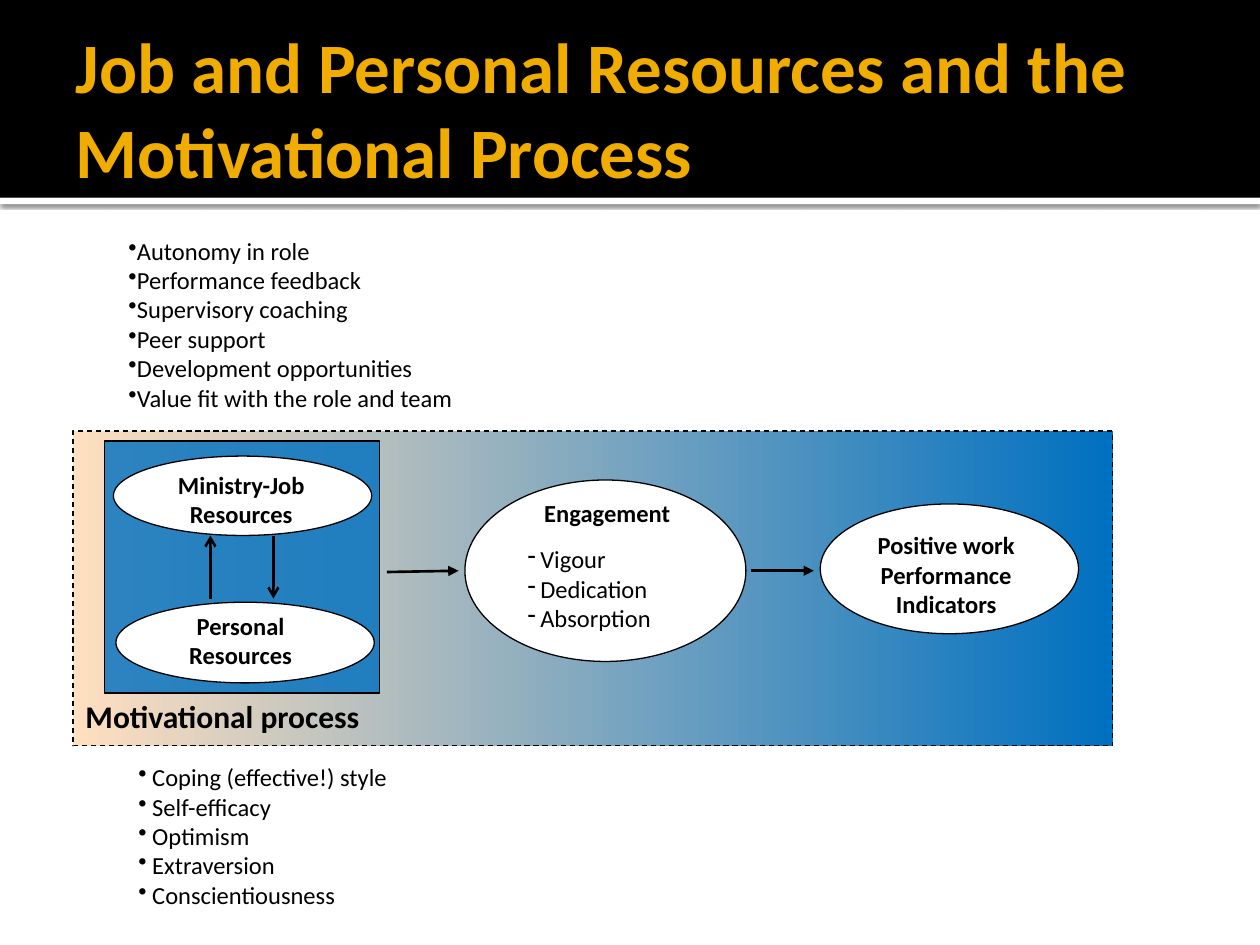
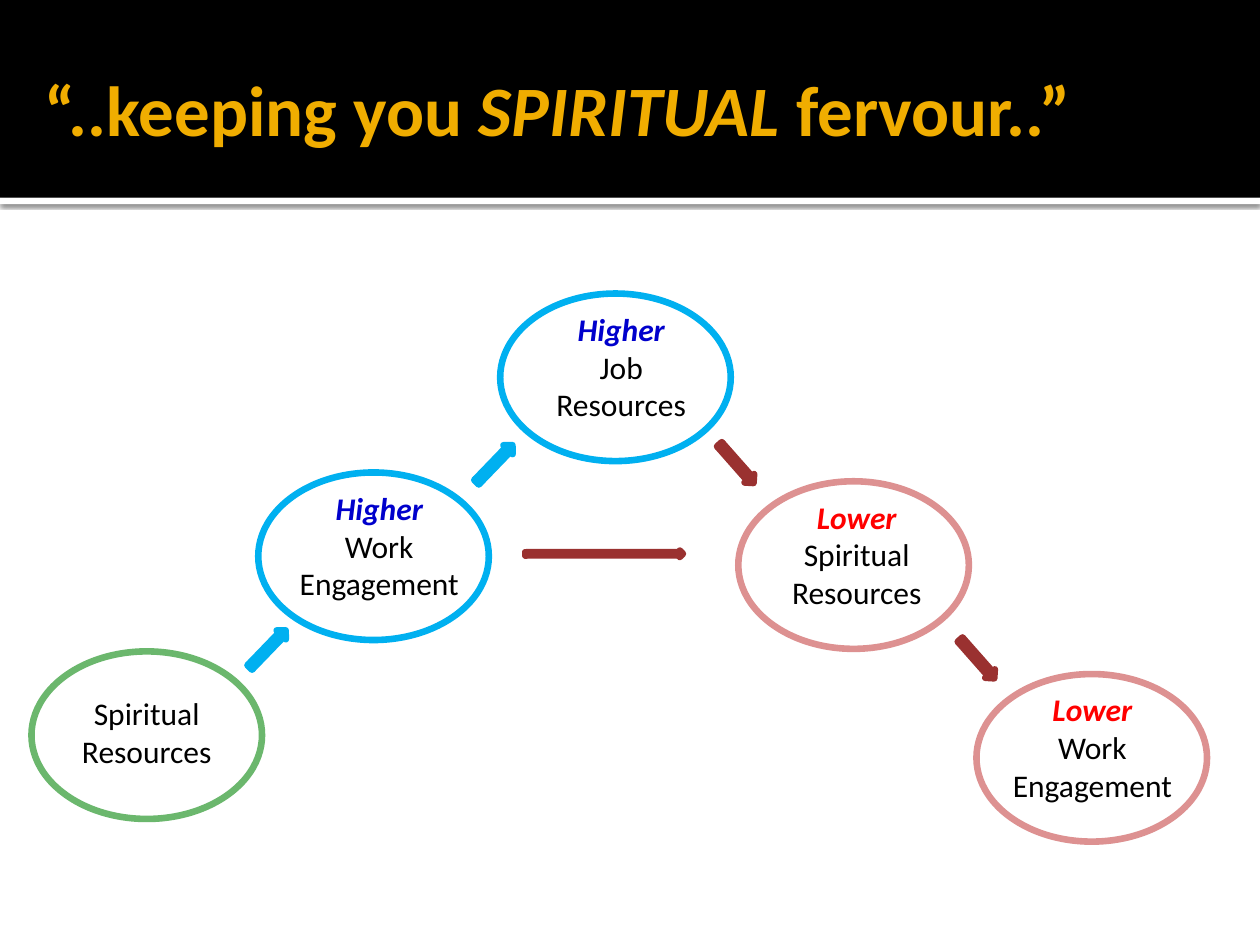
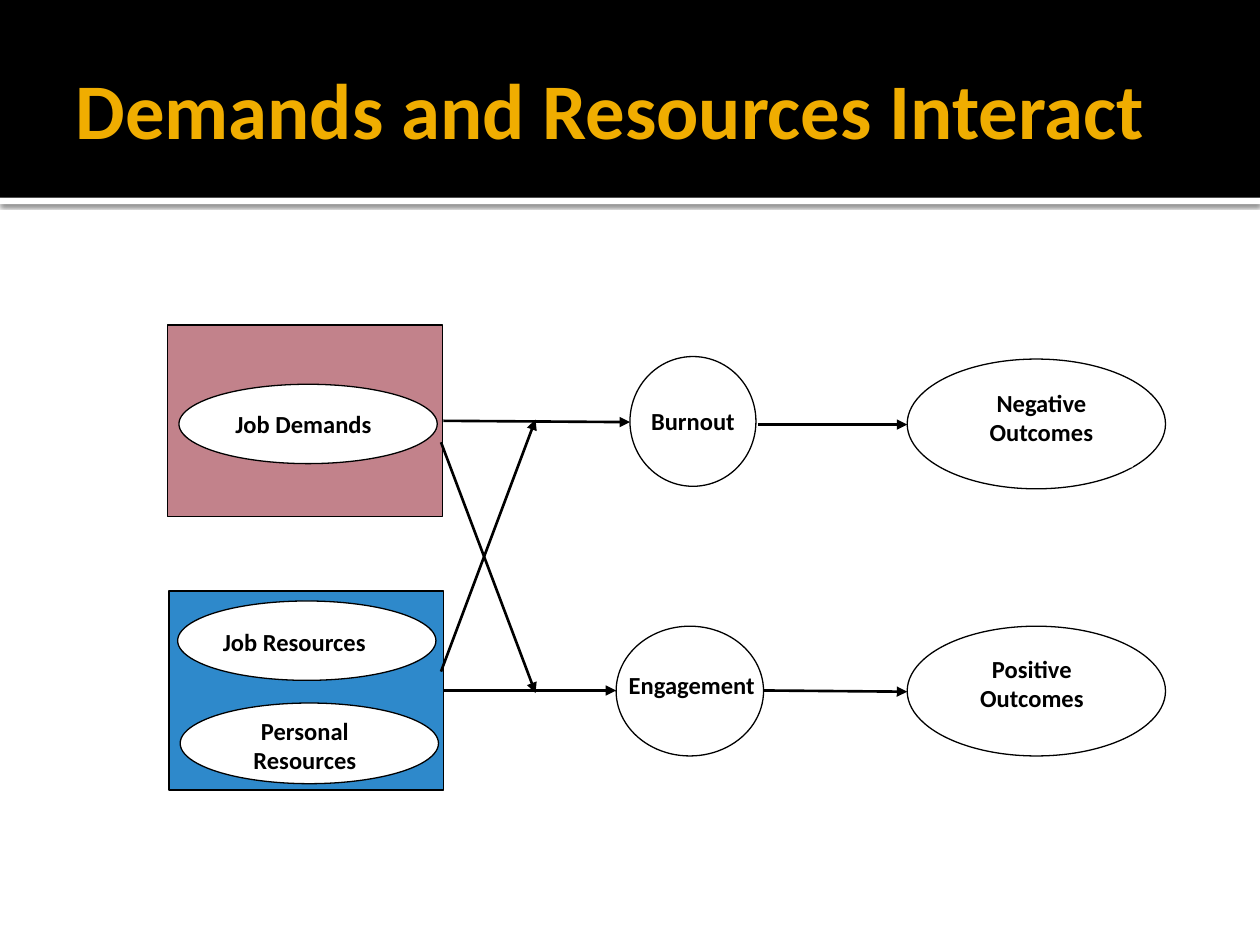
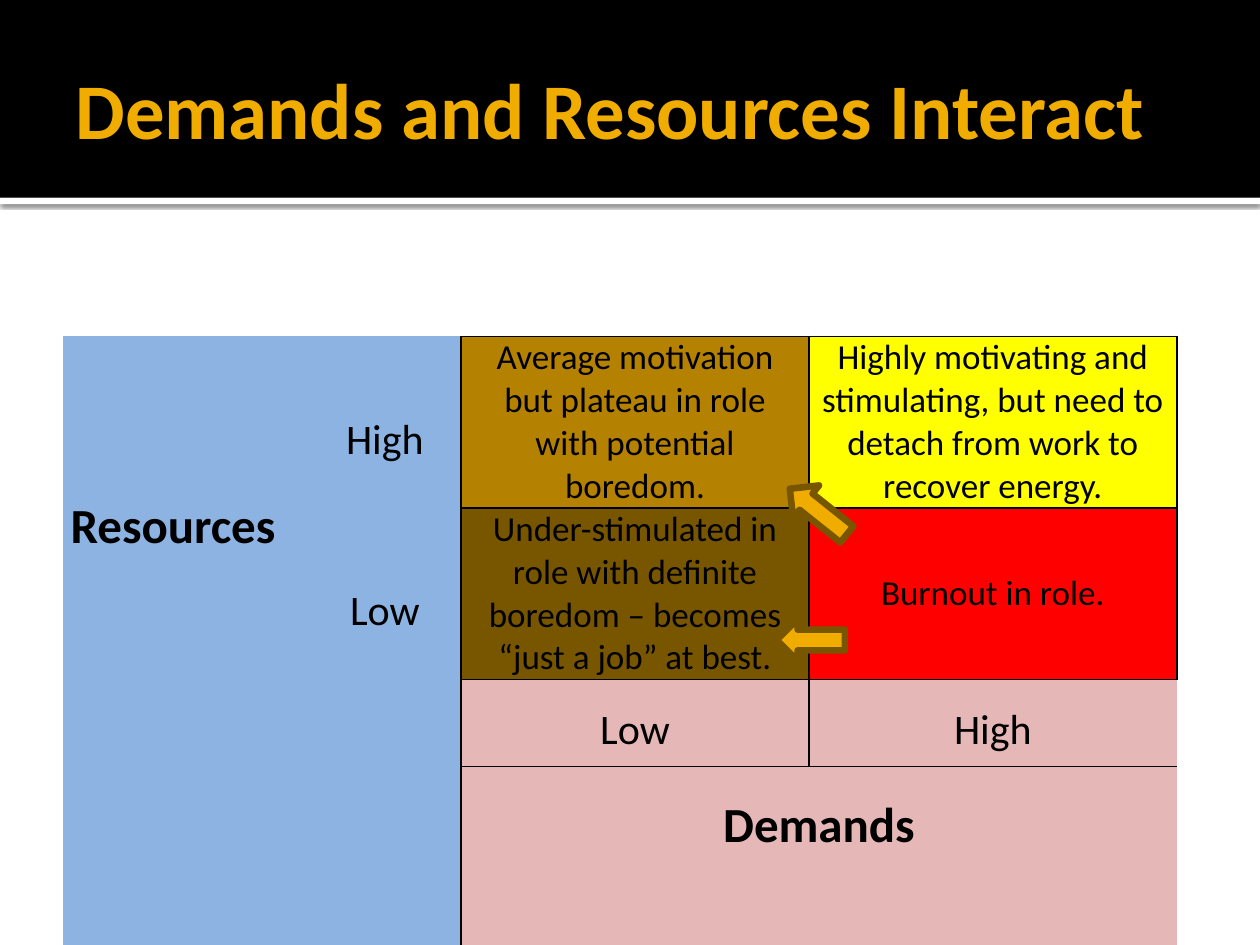
from dataclasses import dataclass
from typing import Optional

import lxml.etree
import pptx
import pptx.dml.color
import pptx.enum.dml
import pptx.enum.shapes
import pptx.enum.text
import pptx.oxml.ns
import pptx.util

Inches = pptx.util.Inches
Pt = pptx.util.Pt
RGBColor = pptx.dml.color.RGBColor
SHAPE = pptx.enum.shapes.MSO_SHAPE
ALIGN = pptx.enum.text.PP_ALIGN
ANCHOR = pptx.enum.text.MSO_ANCHOR
qn = pptx.oxml.ns.qn

# Shared look
FONT = "Calibri"
BLACK = RGBColor(0x00, 0x00, 0x00)
WHITE = RGBColor(0xFF, 0xFF, 0xFF)
GOLD = RGBColor(0xF0, 0xAD, 0x00)
BROWN = RGBColor(0x78, 0x56, 0x00)
OCHRE = RGBColor(0xB4, 0x82, 0x00)
PEACH = RGBColor(0xFF, 0xDF, 0xBF)
BLUE = RGBColor(0x00, 0x70, 0xC0)
SKY = RGBColor(0x00, 0xB0, 0xF0)
PALE_BLUE = RGBColor(0x8D, 0xB3, 0xE2)
NAVY = RGBColor(0x00, 0x00, 0xCC)
GREEN = RGBColor(0x6B, 0xB7, 0x6D)
ROSE = RGBColor(0xDD, 0x91, 0x91)
PINK = RGBColor(0xE5, 0xB8, 0xB7)
MAROON = RGBColor(0x9A, 0x31, 0x30)
WINE = RGBColor(0x90, 0x19, 0x29)
RED = RGBColor(0xFF, 0x00, 0x00)
YELLOW = RGBColor(0xFF, 0xFF, 0x00)
HEAVY = 3.78
NO_GRID_STYLE = "{2D5ABB26-0587-4C30-8999-92F81FD0307C}"

Box = tuple[float, float, float, float]
Point = tuple[float, float]


@dataclass
class Label:
    text: str
    at: Box
    fill: Optional[RGBColor] = None
    align: ALIGN = ALIGN.CENTER


@dataclass
class Arrow:
    start: Point
    end: Point
    head: str = "triangle"


@dataclass
class Node:
    left: float
    top: float
    color: RGBColor
    label_dx: float
    label_width: float
    text: str
    level: str = ""
    level_color: RGBColor = NAVY


@dataclass
class BlockArrow:
    kind: SHAPE
    at: Box
    rotation: float
    fill: RGBColor
    line: RGBColor


@dataclass
class Cell:
    row: int
    col: int
    text: str
    fill: RGBColor
    size: float
    borders: str = ""
    bold: bool = False
    align: ALIGN = ALIGN.CENTER
    anchor: ANCHOR = ANCHOR.TOP
    margin_top: float = 0
    spacing: float = 1
    span: tuple[int, int] = (1, 1)


def sub(parent, tag: str, **attrs):
    return lxml.etree.SubElement(parent, qn(tag), attrs)


def write(tf, text: str, *, size: float = 14, bold: bool = False, italic: bool = False,
          color: RGBColor = BLACK, align: ALIGN = ALIGN.LEFT, bullet: str = "",
          hang: float = 0, after: float = 0, spacing: float = 1, run_on: bool = False) -> None:
    """Add a paragraph, or with run_on a further run of the last one."""
    p = tf.paragraphs[-1]
    if p.runs and not run_on:
        p = tf.add_paragraph()
    p.alignment, p.space_after, p.line_spacing = align, Pt(after), spacing
    if bullet:
        pPr = p._p.get_or_add_pPr()
        pPr.set("marL", str(Inches(hang)))
        pPr.set("indent", str(Inches(-hang)))
        sub(pPr, "a:buChar", char=bullet)
    r = p.add_run()
    r.text = text
    r.font.name, r.font.size = FONT, Pt(size)
    r.font.bold, r.font.italic = bold, italic
    r.font.color.rgb = color


def add_box(shapes, kind: SHAPE, at: Box, fill: Optional[RGBColor] = None,
            line: Optional[RGBColor] = None, width: float = 0.75, opacity: int = 100):
    sp = shapes.add_shape(kind, *map(Inches, at))
    sp.shadow.inherit = False
    if fill is None:
        sp.fill.background()
    else:
        sp.fill.solid()
        sp.fill.fore_color.rgb = fill
        if opacity < 100:
            color = next(sp.element.spPr.iter(qn("a:srgbClr")))
            sub(color, "a:alpha", val=str(opacity * 1000))
    if line is None:
        sp.line.fill.background()
    else:
        sp.line.color.rgb = line
        sp.line.width = Pt(width)
    return sp


def add_text_box(shapes, at: Box, fill: Optional[RGBColor] = None):
    if fill is None:
        sp = shapes.add_textbox(*map(Inches, at))
    else:
        sp = add_box(shapes, SHAPE.RECTANGLE, at, fill)
    tf = sp.text_frame
    tf.word_wrap = True
    tf.vertical_anchor = ANCHOR.TOP
    return tf


def add_label(shapes, label: Label):
    tf = add_text_box(shapes, label.at, label.fill)
    write(tf, label.text, bold=True, align=label.align, after=10)
    return tf


def add_ellipse(shapes, at: Box, fill: Optional[RGBColor] = WHITE):
    return add_box(shapes, SHAPE.OVAL, at, fill, BLACK)


def add_list(shapes, at: Box, items: list[str], hang: float) -> None:
    tf = add_text_box(shapes, at)
    for item in items:
        write(tf, item, bullet="•", hang=hang)


def add_arrow(shapes, arrow: Arrow) -> None:
    c = shapes.add_connector(pptx.enum.shapes.MSO_CONNECTOR.STRAIGHT,
                             *map(Inches, arrow.start + arrow.end))
    c.line.color.rgb = BLACK
    c.line.width = Pt(1.5)
    spPr = c.element.spPr
    sub(spPr.find(qn("a:ln")), "a:tailEnd", type=arrow.head)
    sub(spPr, "a:effectLst")


def add_block_arrow(shapes, arrow: BlockArrow) -> None:
    sp = add_box(shapes, arrow.kind, arrow.at, arrow.fill, arrow.line, HEAVY)
    sp.rotation = arrow.rotation


def add_bands(s, layout) -> None:
    """Draw the title band and its edge, and move them to the back of the layout."""
    edge = add_box(s.shapes, SHAPE.RECTANGLE, (0, 1.57, 10, 0.05), WHITE)
    effects = edge.element.spPr.find(qn("a:effectLst"))
    shadow = sub(effects, "a:outerShdw", blurRad=str(Pt(2.5)), dist=str(Pt(0.8)), dir="5400000")
    sub(sub(shadow, "a:srgbClr", val=str(BLACK)), "a:alpha", val="60000")
    band = add_box(s.shapes, SHAPE.RECTANGLE, (0, 0, 10, 1.57), BLACK)
    for i, sp in enumerate((edge, band), start=2):
        layout.shapes.element.insert(i, sp.element)


def add_slide(prs, title: list[tuple[str, bool]], size: float = 45,
              left: float = 0.5, width: float = 9):
    """Add a slide with its title, given as (text, italic) runs."""
    layout = prs.slide_layouts[5]
    s = prs.slides.add_slide(layout)
    if len(prs.slides) == 1:
        add_bands(s, layout)
    sp = s.shapes.title
    sp.left, sp.top, sp.width, sp.height = map(Inches, (left, 0.17, width, 1.37))
    tf = sp.text_frame
    tf.auto_size = pptx.enum.text.MSO_AUTO_SIZE.NONE
    tf.vertical_anchor = ANCHOR.MIDDLE
    tf.margin_left = Inches(0.1)
    tf.margin_top = tf.margin_right = tf.margin_bottom = Inches(0.05)
    for text, italic in title:
        write(tf, text, size=size, bold=True, italic=italic, color=GOLD, run_on=True)
    return s


def build_motivation(prs) -> None:
    s = add_slide(prs, [("Job and Personal Resources and the Motivational Process", False)], 40.5)
    shapes = s.shapes
    add_list(shapes, (0.92, 1.82, 3.17, 1.51),
             ["Autonomy in role", "Performance feedback", "Supervisory coaching",
              "Peer support", "Development opportunities",
              "Value fit with the role and team"], 0)
    add_list(shapes, (1, 6, 2.25, 1.51),
             ["Coping (effective!) style", "Self-efficacy", "Optimism",
              "Extraversion", "Conscientiousness"], 0.11)

    # Process panel
    panel = add_box(shapes, SHAPE.RECTANGLE, (0.58, 3.42, 8.25, 2.5), WHITE, BLACK)
    panel.line.dash_style = pptx.enum.dml.MSO_LINE.DASH
    panel.fill.gradient()
    panel.fill.gradient_angle = 0
    for stop, color in zip(panel.fill.gradient_stops, (PEACH, BLUE)):
        stop.color.rgb = color
    tf = panel.text_frame
    tf.vertical_anchor = ANCHOR.BOTTOM
    tf.margin_bottom = Inches(0.09)
    write(tf, "Motivational process", size=18, bold=True)

    # Ellipses and their labels
    add_ellipse(shapes, (3.69, 3.81, 2.23, 1.44))
    add_ellipse(shapes, (6.51, 4, 2.05, 1.03))
    add_box(shapes, SHAPE.RECTANGLE, (0.83, 3.5, 2.18, 2), BLUE, BLACK, opacity=82)
    add_ellipse(shapes, (0.9, 3.62, 2.05, 0.63))
    add_ellipse(shapes, (0.92, 4.78, 2.05, 0.64))
    add_label(shapes, Label("Ministry-Job Resources", (1.08, 3.68, 1.67, 0.42)))
    add_label(shapes, Label("Personal Resources", (1.24, 4.8, 1.34, 0.25)))
    add_label(shapes, Label("Positive work Performance Indicators",
                            (6.84, 4.16, 1.34, 0.68), WHITE))
    engagement = add_label(shapes, Label("Engagement", (4.09, 3.9, 1.46, 1.3)))
    for sign in ("Vigour", "Dedication", "Absorption"):
        write(engagement, sign, bullet="-", hang=0.1)

    for arrow in (Arrow((3.07, 4.54), (3.64, 4.53)),
                  Arrow((5.96, 4.53), (6.46, 4.53)),
                  Arrow((1.67, 4.75), (1.67, 4.25), "arrow"),
                  Arrow((2.17, 4.25), (2.17, 4.75), "arrow")):
        add_arrow(shapes, arrow)


def add_node(shapes, node: Node) -> None:
    group = shapes.add_group_shape().shapes
    add_box(group, SHAPE.OVAL, (node.left, node.top, 1.83, 1.33), None, node.color, HEAVY)
    dy, height = (0.08, 1.01) if node.level else (0.29, 0.71)
    tf = add_text_box(group, (node.left + node.label_dx, node.top + dy, node.label_width, height))
    if node.level:
        write(tf, node.level, size=18, bold=True, italic=True,
              color=node.level_color, align=ALIGN.CENTER)
    write(tf, node.text, size=18, align=ALIGN.CENTER)


def build_spiral(prs) -> None:
    s = add_slide(prs, [("“..keeping you ", False), ("SPIRITUAL", True), (" fervour..”", False)],
                  40.5, 0.25, 9.25)
    for node in (
        Node(0.25, 5.17, GREEN, 0.25, 1.33, "Spiritual Resources"),
        Node(2.05, 3.75, SKY, 0.17, 1.58, "Work Engagement", "Higher"),
        Node(3.97, 2.33, SKY, 0.25, 1.42, "Job Resources", "Higher"),
        Node(5.86, 3.82, ROSE, 0.19, 1.5, "Spiritual Resources", "Lower", RED),
        Node(7.75, 5.35, ROSE, 0.13, 1.58, "Work Engagement", "Lower", RED),
    ):
        add_node(s.shapes, node)

    # Rising, falling and level arrows
    for at, rotation, color in (
        ((1.92, 5.1, 0.41, 0.1), 314, SKY),
        ((3.72, 3.63, 0.41, 0.1), 314, SKY),
        ((5.64, 3.63, 0.41, 0.1), 48.6, MAROON),
        ((7.55, 5.18, 0.41, 0.1), 48.6, MAROON),
        ((4.17, 4.37, 1.25, 0.05), 0, MAROON),
    ):
        add_block_arrow(s.shapes, BlockArrow(SHAPE.STRIPED_RIGHT_ARROW, at, rotation, color, color))


def build_interaction(prs) -> None:
    shapes = add_slide(prs, [("Demands and Resources Interact", False)]).shapes

    # Demands and resources panels
    add_box(shapes, SHAPE.RECTANGLE, (1.33, 2.58, 2.18, 1.52), WINE, BLACK, opacity=54)
    add_box(shapes, SHAPE.RECTANGLE, (1.34, 4.69, 2.18, 1.58), BLUE, BLACK, opacity=82)

    # Ellipses
    for at in ((1.42, 3.05, 2.05, 0.63), (1.41, 4.77, 2.05, 0.63), (1.43, 5.58, 2.05, 0.64),
               (7.2, 2.85, 2.05, 1.03), (7.2, 4.97, 2.05, 1.03)):
        add_ellipse(shapes, at)
    for at in ((5, 2.83, 1, 1.03), (4.89, 4.97, 1.17, 1.03)):
        add_ellipse(shapes, at, None)

    for label in (
        Label("Job Demands", (1.77, 3.2, 1.34, 0.33), WHITE, ALIGN.LEFT),
        Label("Job Resources", (1.67, 4.93, 1.36, 0.25), WHITE, ALIGN.LEFT),
        Label("Personal Resources", (1.75, 5.63, 1.34, 0.25)),
        Label("Burnout", (4.75, 3.17, 1.5, 0.82)),
        Label("Engagement", (4.82, 5.27, 1.34, 0.89)),
        Label("Negative Outcomes", (7.54, 3.03, 1.45, 0.68), WHITE),
        Label("Positive Outcomes", (7.52, 5.14, 1.34, 0.68), WHITE),
    ):
        add_label(shapes, label)

    for arrow in (
        Arrow((3.52, 3.34), (5, 3.35)),
        Arrow((3.52, 5.48), (4.89, 5.48)),
        Arrow((6.06, 5.48), (7.2, 5.49)),
        Arrow((6.02, 3.37), (7.2, 3.37)),
        Arrow((3.5, 3.51), (4.25, 5.5)),
        Arrow((3.5, 5.33), (4.25, 3.33)),
    ):
        add_arrow(shapes, arrow)


def set_borders(cell, sides: str) -> None:
    tcPr = cell._tc.get_or_add_tcPr()
    for i, side in enumerate(sides):
        ln = sub(tcPr, "a:ln" + side, w=str(Pt(1)))
        sub(sub(ln, "a:solidFill"), "a:srgbClr", val=str(BLACK))
        tcPr.insert(i, ln)


def fill_cell(table, item: Cell) -> None:
    rows, cols = item.span
    cell = table.cell(item.row, item.col)
    if item.span != (1, 1):
        cell.merge(table.cell(item.row + rows - 1, item.col + cols - 1))
    for r in range(item.row, item.row + rows):
        for c in range(item.col, item.col + cols):
            fill = table.cell(r, c).fill
            fill.solid()
            fill.fore_color.rgb = item.fill
    cell.margin_left = cell.margin_right = Inches(0.06)
    cell.margin_top, cell.margin_bottom = Inches(item.margin_top), 0
    cell.vertical_anchor = item.anchor
    write(cell.text_frame, item.text, size=item.size, bold=item.bold, align=item.align,
          spacing=item.spacing, after=6 if item.spacing > 1 else 0)
    set_borders(cell, item.borders)


def build_matrix(prs) -> None:
    s = add_slide(prs, [("Demands and Resources Interact", False)])
    widths, heights = (1.95, 1.21, 2.76, 2.92), (1.36, 1.36, 0.69, 1.42)
    frame = s.shapes.add_table(len(heights), len(widths), Inches(0.5), Inches(2.67),
                               Inches(sum(widths)), Inches(sum(heights)))
    table = frame.table
    table.first_row = table.horz_banding = False
    next(frame.element.iter(qn("a:tableStyleId"))).text = NO_GRID_STYLE
    for column, width in zip(table.columns, widths):
        column.width = Inches(width)
    for row, height in zip(table.rows, heights):
        row.height = Inches(height)

    # Axis headings
    for item in (
        Cell(0, 0, "Resources", PALE_BLUE, 28, bold=True, align=ALIGN.LEFT,
             margin_top=1.27, span=(4, 1)),
        Cell(0, 1, "High", PALE_BLUE, 24, "R", margin_top=0.62),
        Cell(1, 1, "Low", PALE_BLUE, 24, "R", margin_top=0.62, span=(3, 1)),
        Cell(2, 2, "Low", PINK, 24, "LT", spacing=1.5),
        Cell(2, 3, "High", PINK, 24, "T", spacing=1.5),
        Cell(3, 2, "Demands", PINK, 28, "L", bold=True, spacing=1.5, span=(1, 2)),
    ):
        fill_cell(table, item)

    # Quadrants
    for row, col, text, fill in (
        (0, 2, "Average motivation but plateau in role with potential boredom.", OCHRE),
        (0, 3, "Highly motivating and stimulating, but need to detach from work "
               "to recover energy.", YELLOW),
        (1, 2, "Under-stimulated in role with definite boredom – becomes "
               "“just a job” at best.", BROWN),
        (1, 3, "Burnout in role.", RED),
    ):
        fill_cell(table, Cell(row, col, text, fill, 20, "LRTB", anchor=ANCHOR.MIDDLE))

    for at, rotation in (((6.27, 4.81, 0.33, 0.54), 90), ((6.33, 3.77, 0.33, 0.58), 128.6)):
        add_block_arrow(s.shapes, BlockArrow(SHAPE.DOWN_ARROW, at, rotation, GOLD, BROWN))


def main() -> None:
    prs = pptx.Presentation()
    prs.slide_width, prs.slide_height = Inches(10), Inches(7.5)
    build_motivation(prs)
    build_spiral(prs)
    build_interaction(prs)
    build_matrix(prs)
    prs.save("out.pptx")


if __name__ == "__main__":
    main()
